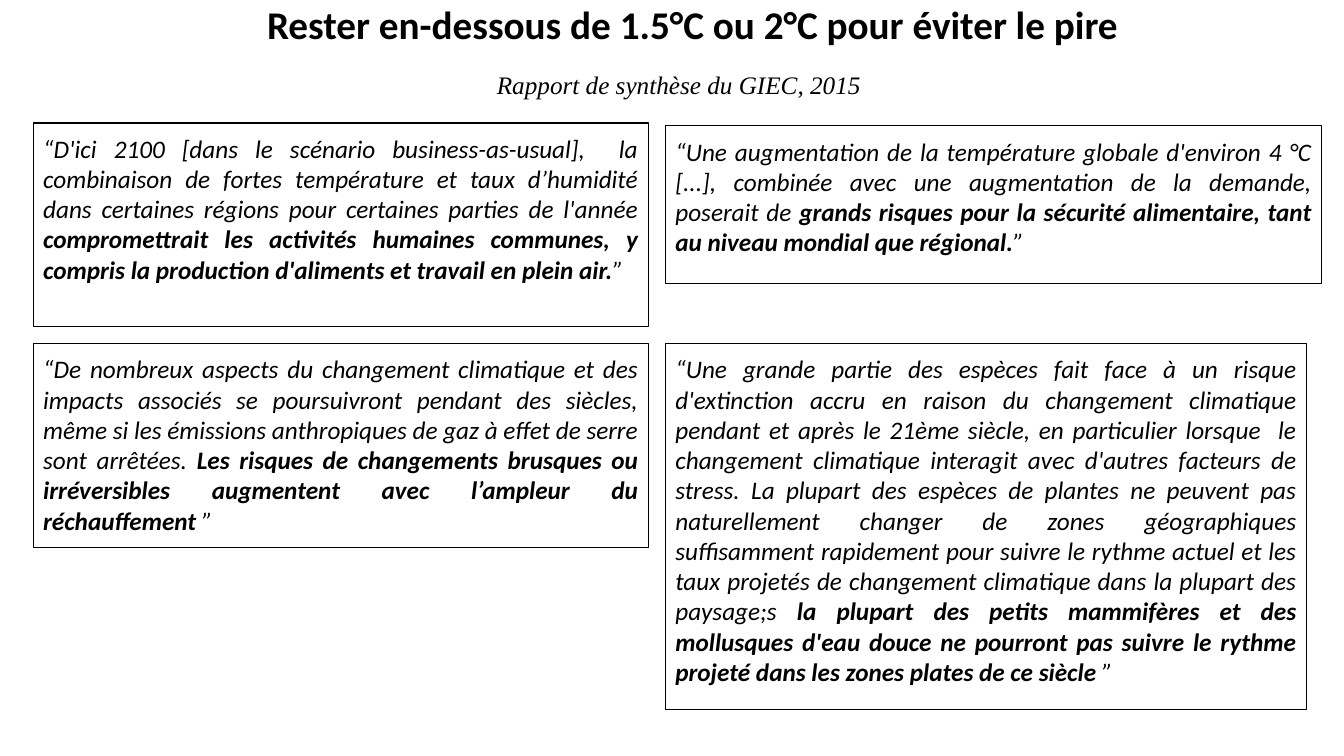
from pptx import Presentation
from pptx.dml.color import RGBColor
from pptx.enum.shapes import MSO_SHAPE
from pptx.enum.text import MSO_ANCHOR, PP_ALIGN
from pptx.util import Inches, Pt

RECT = MSO_SHAPE.RECTANGLE
TOP = MSO_ANCHOR.TOP
LEFT, JUSTIFY = PP_ALIGN.LEFT, PP_ALIGN.JUSTIFY
BLACK = "000000"
SANS, SERIF = "Calibri", "Times New Roman"
COL_1, COL_2 = 0.33, 6.6
ROW_2 = 3.41

QUOTES = [
    ((COL_1, 1.22, 6.1, 2.02),
     "“D'ici 2100 [dans le scénario business-as-usual],  la combinaison de fortes "
     "température et taux d’humidité dans certaines régions pour certaines parties "
     "de l'année ",
     "compromettrait les activités humaines communes, y compris la production "
     "d'aliments et travail en plein air.", "”"),
    ((COL_2, 1.25, 6.51, 1.56),
     "“Une augmentation de la température globale d'environ 4 °C [...], combinée "
     "avec une augmentation de la demande, poserait de ",
     "grands risques pour la sécurité alimentaire, tant au niveau mondial que "
     "régional.", "”"),
    ((COL_1, ROW_2, 6.1, 2.02),
     "“De nombreux aspects du changement climatique et des impacts associés se "
     "poursuivront pendant des siècles, même si les émissions anthropiques de gaz "
     "à effet de serre sont arrêtées. ",
     "Les risques de changements brusques ou irréversibles augmentent avec "
     "l’ampleur du réchauffement ", "”"),
    ((COL_2, ROW_2, 6.36, 3.63),
     "“Une grande partie des espèces fait face à un risque d'extinction accru en "
     "raison du changement climatique pendant et après le 21ème siècle, en "
     "particulier lorsque  le changement climatique interagit avec d'autres "
     "facteurs de stress. La plupart des espèces de plantes ne peuvent pas "
     "naturellement changer de zones géographiques suffisamment rapidement pour "
     "suivre le rythme actuel et les taux projetés de changement climatique dans "
     "la plupart des paysage;s ",
     "la plupart des petits mammifères et des mollusques d'eau douce ne pourront "
     "pas suivre le rythme projeté dans les zones plates de ce siècle", " ”"),
]


def color(code):
    """Turn a hex string into a colour."""
    return RGBColor.from_string(code)


def style(run, size, face, bold=False, italic=False):
    """Set the font of a run."""
    font = run.font
    font.size, font.name = Pt(size), face
    font.bold, font.italic = bold, italic
    font.color.rgb = color(BLACK)


def set_frame(frame, pad):
    """Wrap a text frame, pin it to the top and pad it above and below."""
    frame.word_wrap = True
    frame.vertical_anchor = TOP
    frame.margin_left = frame.margin_right = Inches(0.1)
    frame.margin_top = frame.margin_bottom = Inches(pad)


def add_line(slide, box, text, align, size, face, **look):
    """Place a one-line heading in the given box."""
    frame = slide.shapes.add_textbox(*map(Inches, box)).text_frame
    set_frame(frame, 0.05)
    frame.text = text
    para = frame.paragraphs[0]
    para.alignment = align
    style(para.runs[0], size, face, **look)


def add_quote(slide, box, start, key, end):
    """Place a framed quote whose key words are bold."""
    shape = slide.shapes.add_shape(RECT, *map(Inches, box))
    shape.shadow.inherit = False
    shape.fill.background()
    shape.line.color.rgb = color(BLACK)
    shape.line.width = Pt(0.75)
    set_frame(shape.text_frame, 0.1)
    para = shape.text_frame.paragraphs[0]
    para.alignment = JUSTIFY
    for text in (start, key, end):
        run = para.add_run()
        run.text = text
        style(run, 18, SANS, bold=text is key, italic=True)


def main():
    """Build the slide and save it."""
    deck = Presentation()
    deck.slide_width, deck.slide_height = Inches(13.33), Inches(7.5)
    slide = deck.slides.add_slide(deck.slide_layouts[6])
    add_line(slide, (2.55, -0.05, 9.19, 0.57),
             "Rester en-dessous de 1.5°C ou 2°C pour éviter le pire",
             LEFT, 28, SANS, bold=True)
    add_line(slide, (4.83, 0.64, 3.9, 0.47),
             "Rapport de synthèse du GIEC, 2015",
             JUSTIFY, 18, SERIF, italic=True)
    for quote in QUOTES:
        add_quote(slide, *quote)
    deck.save("out.pptx")


if __name__ == "__main__":
    main()
